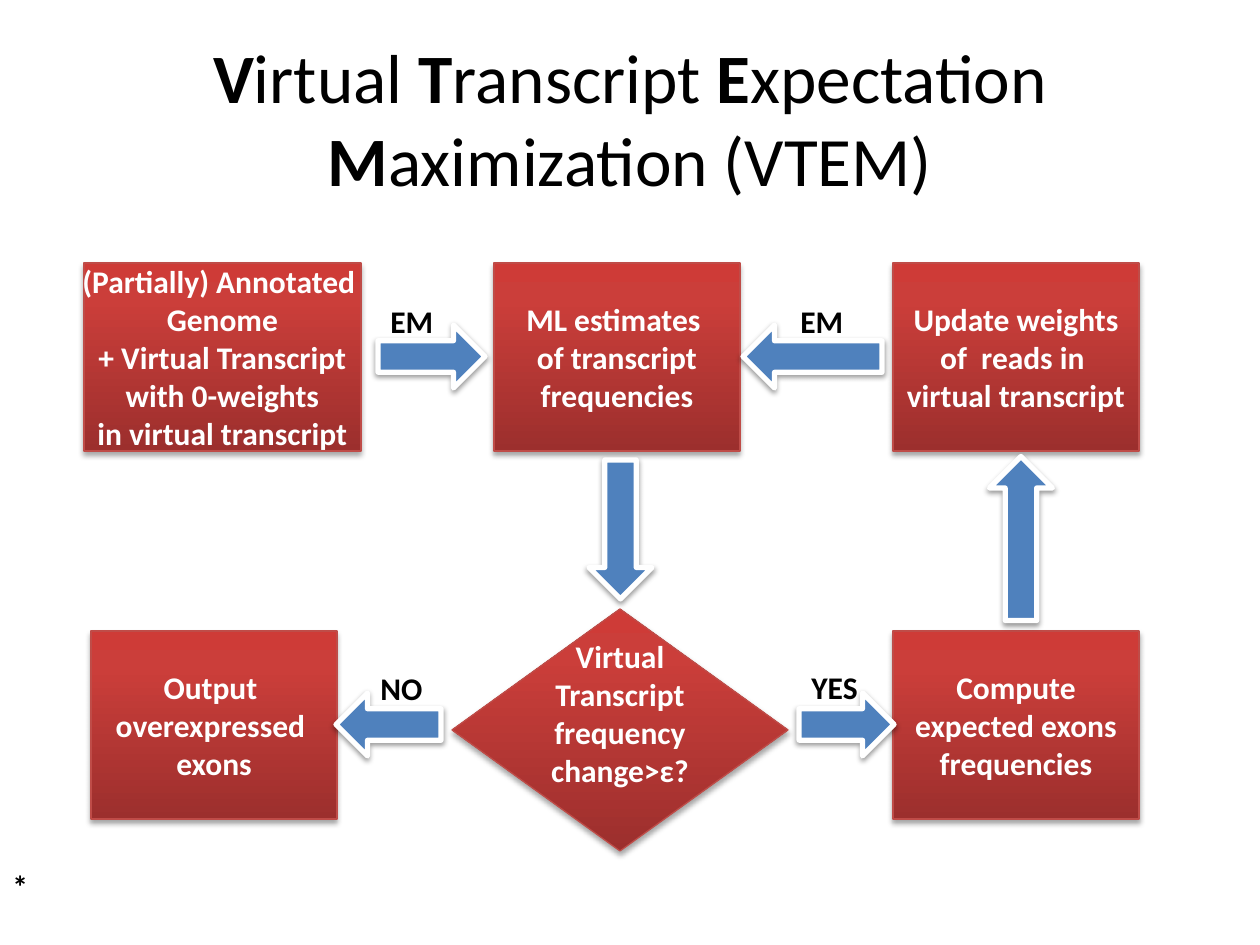
from dataclasses import dataclass
from lxml.etree import SubElement
from pptx import Presentation
from pptx.dml.color import RGBColor
from pptx.enum.shapes import MSO_SHAPE
from pptx.enum.text import MSO_ANCHOR, PP_ALIGN
from pptx.oxml.ns import qn
from pptx.util import Emu, Pt

EMU_PER_PX = 914400 / 126


def px(length):
    return Emu(round(length * EMU_PER_PX))


@dataclass(frozen=True)
class Theme:
    font: str = "Calibri"
    title_size: float = 39.6
    body_size: float = 18
    ink: str = "000000"
    paper: str = "FFFFFF"
    arrow_fill: str = "4F81BD"
    box_line: str = "BF4C48"
    box_stops: tuple = ((0, "9C2F2D"), (80, "CB3E3A"), (100, "CE3B37"))
    box_line_width: float = 0.75
    arrow_line_width: float = 3


class FlowSlide:
    def __init__(self, slide, theme):
        self.slide = slide
        self.theme = theme

    def add_run(self, paragraph, text, size, color, bold):
        run = paragraph.add_run()
        run.text = text
        font = run.font
        font.name = self.theme.font
        font.size = Pt(size)
        font.bold = bold
        font.color.rgb = RGBColor.from_string(color)

    def title(self, bounds, runs):
        shape = self.slide.shapes.title
        shape.left, shape.top, shape.width, shape.height = map(px, bounds)
        frame = shape.text_frame
        frame.vertical_anchor = MSO_ANCHOR.MIDDLE
        paragraph = frame.paragraphs[0]
        paragraph.alignment = PP_ALIGN.CENTER
        for text, bold in runs:
            self.add_run(paragraph, text, self.theme.title_size, self.theme.ink, bold)

    def outline(self, shape, color, width):
        shape.line.color.rgb = RGBColor.from_string(color)
        shape.line.width = Pt(width)

    def add_shadow(self, shape, distance, opacity):
        shape.shadow.inherit = False
        effects = shape._element.spPr.find(qn("a:effectLst"))
        shadow = SubElement(effects, qn("a:outerShdw"), blurRad=str(Pt(3.1)),
                            dist=str(Pt(distance)), dir="5400000", rotWithShape="0")
        color = SubElement(shadow, qn("a:srgbClr"), val=self.theme.ink)
        SubElement(color, qn("a:alpha"), val=str(opacity * 1000))

    def fill_gradient(self, shape):
        shape.fill.gradient()
        shape.fill.gradient_angle = 90
        stops = shape._element.spPr.find(qn("a:gradFill")).find(qn("a:gsLst"))
        for stop in list(stops):
            stops.remove(stop)
        for position, color in self.theme.box_stops:
            stop = SubElement(stops, qn("a:gs"), pos=str(position * 1000))
            SubElement(stop, qn("a:srgbClr"), val=color)

    def box(self, bounds, lines, preset=MSO_SHAPE.RECTANGLE, bottom_inset=5):
        shape = self.slide.shapes.add_shape(preset, *map(px, bounds))
        self.fill_gradient(shape)
        self.outline(shape, self.theme.box_line, self.theme.box_line_width)
        self.add_shadow(shape, 1.8, 35)
        frame = shape.text_frame
        frame.word_wrap = False
        frame.vertical_anchor = MSO_ANCHOR.MIDDLE
        frame.margin_left = frame.margin_right = px(11)
        frame.margin_top, frame.margin_bottom = px(5), px(bottom_inset)
        for index, line in enumerate(lines):
            paragraph = frame.add_paragraph() if index else frame.paragraphs[0]
            paragraph.alignment = PP_ALIGN.CENTER
            self.add_run(paragraph, line, self.theme.body_size, self.theme.paper, True)

    def arrow(self, bounds, rotation=0):
        shape = self.slide.shapes.add_shape(MSO_SHAPE.RIGHT_ARROW, *map(px, bounds))
        shape.rotation = rotation
        shape.fill.solid()
        shape.fill.fore_color.rgb = RGBColor.from_string(self.theme.arrow_fill)
        self.outline(shape, self.theme.paper, self.theme.arrow_line_width)
        self.add_shadow(shape, 1.6, 38)

    def label(self, bounds, text):
        frame = self.slide.shapes.add_textbox(*map(px, bounds)).text_frame
        frame.word_wrap = True
        self.add_run(frame.paragraphs[0], text, self.theme.body_size, self.theme.ink, True)


def main():
    presentation = Presentation()
    presentation.slide_width, presentation.slide_height = px(1260), px(945)
    flow = FlowSlide(presentation.slides.add_slide(presentation.slide_layouts[5]), Theme())

    flow.title((63, 38, 1134, 158), (
        ("V", True), ("irtual ", False), ("T", True), ("ranscript ", False),
        ("E", True), ("xpectation ", False), ("M", True), ("aximization (VTEM)", False),
    ))

    box_width, box_height = 246, 188
    top_row, bottom_row = 263, 631
    right_column = 893
    flow.box((84, top_row, 277, box_height), (
        "(Partially) Annotated ", "Genome", "+ Virtual Transcript",
        "with 0-weights", "in virtual transcript"))
    for left, top, lines in (
        (494, top_row, ("ML estimates ", "of transcript", "frequencies")),
        (right_column, top_row, ("Update weights", "of  reads in ", "virtual transcript")),
        (right_column, bottom_row, ("Compute", "expected exons", "frequencies")),
        (91, bottom_row, ("Output ", "overexpressed ", "exons")),
    ):
        flow.box((left, top, box_width, box_height), lines)
    flow.box((452, 609, 336, 242), ("Virtual", "Transcript", "frequency", "change>ε?"),
             MSO_SHAPE.DIAMOND, bottom_inset=39)

    for left, top, length, rotation in (
        (378, 325, 107, 0),
        (743, 325, 139, 180),
        (551, 498, 139, 90),
        (939, 507, 164, 270),
        (799, 693, 95, 0),
        (336, 693, 105, 180),
    ):
        flow.arrow((left, top, length, 63), rotation)

    for left, top, width, text in (
        (378, 296, 73, "EM"),
        (788, 296, 73, "EM"),
        (799, 662, 73, "YES"),
        (368, 663, 73, "NO"),
        (0, 861, 42, "*"),
    ):
        flow.label((left, top, width, 50), text)

    presentation.save("out.pptx")


if __name__ == "__main__":
    main()
